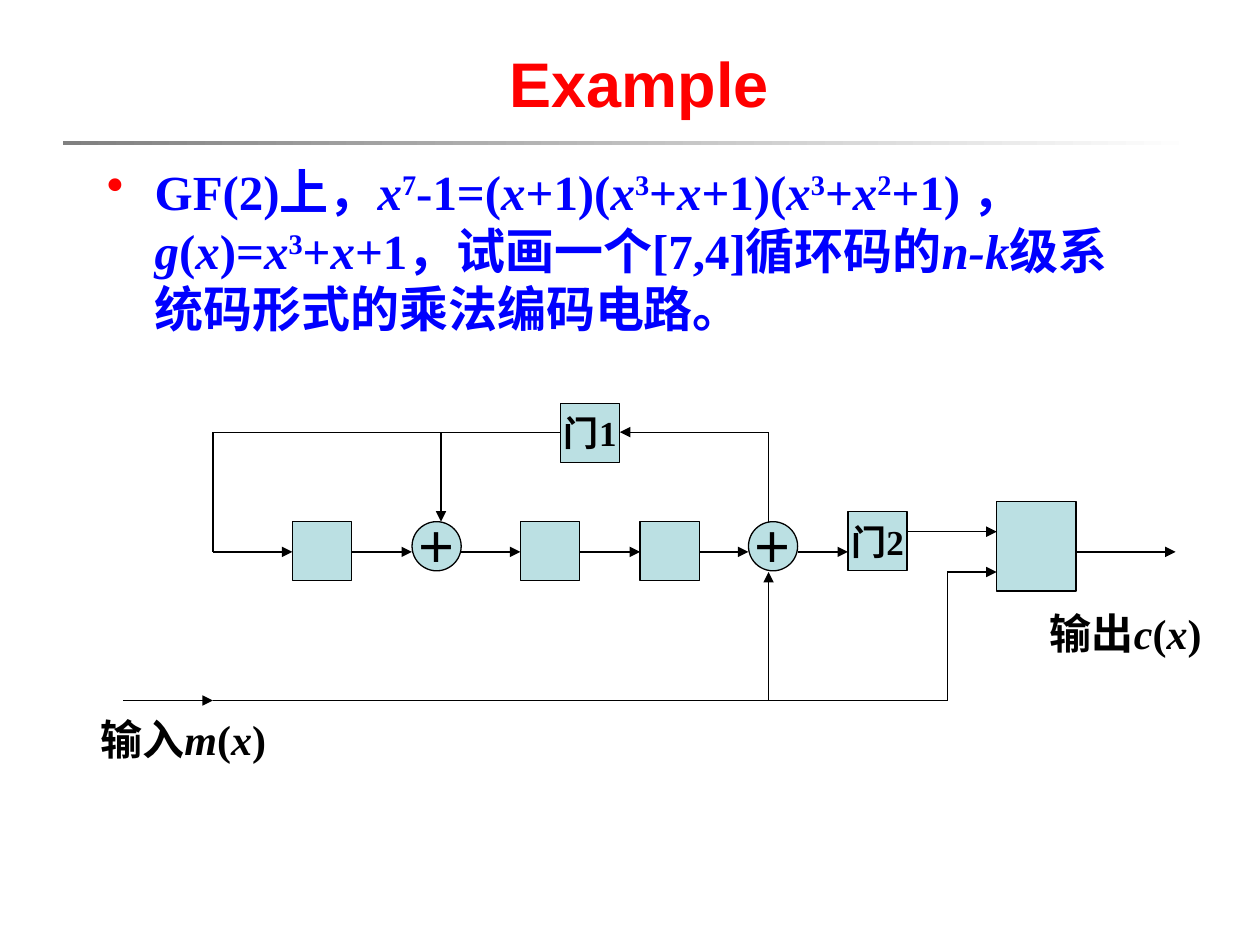
from dataclasses import dataclass
from itertools import pairwise

from lxml import etree
from pptx import Presentation, util as u
from pptx.dml.color import RGBColor
from pptx.enum import shapes, text
from pptx.oxml.ns import qn


@dataclass(frozen=True)
class Theme:
    red: str = "FF0000"
    blue: str = "0000FF"
    black: str = "000000"
    block: str = "BBE0E3"
    rule_start: str = "808080"
    rule_end: str = "FFFFFF"
    sans: str = "Arial"
    serif: str = "Times New Roman"
    title: int = 36
    body: int = 28
    label: int = 24
    gate: int = 20
    line: float = 0.75


@dataclass(frozen=True)
class Block:
    left: float
    top: float
    width: float
    height: float
    caption: str = ""
    round: bool = False

    @property
    def right(self) -> float:
        return self.left + self.width


@dataclass(frozen=True)
class Wire:
    start: tuple[float, float]
    end: tuple[float, float]
    arrow: bool = True


@dataclass(frozen=True)
class Style:
    size: int
    color: str
    latin: str


THEME = Theme()
SIDE, DISC = 0.47, 0.39
ROW, MIDDLE, FEEDBACK, INPUT = 4.14, 4.38, 3.43, 5.56
LOOP, TAP, SUM, BYPASS = 1.69, 3.5, 6.1, 7.52
UPPER, LOWER = 4.22, 4.54

GATE_ONE = Block(4.45, 3.2, SIDE, SIDE, "门1")
GATE_TWO = Block(6.73, 4.06, SIDE, SIDE, "门2")
SWITCH = Block(7.91, 3.98, 0.63, 0.71)
CHAIN = [
    Block(2.32, ROW, SIDE, SIDE),
    Block(3.27, ROW, DISC, DISC, "＋", True),
    Block(4.13, ROW, SIDE, SIDE),
    Block(5.08, ROW, SIDE, SIDE),
    Block(5.94, ROW, DISC, DISC, "＋", True),
    GATE_TWO,
]
WIRES = [
    *(Wire((a.right, MIDDLE), (b.left, MIDDLE)) for a, b in pairwise(CHAIN)),
    Wire((0.98, INPUT), (LOOP, INPUT)),
    Wire((LOOP, INPUT), (BYPASS, INPUT), False),
    Wire((SUM, INPUT), (SUM, LOWER)),
    Wire((BYPASS, INPUT), (BYPASS, LOWER), False),
    Wire((BYPASS, LOWER), (SWITCH.left, LOWER)),
    Wire((GATE_TWO.right, UPPER), (SWITCH.left, UPPER)),
    Wire((SWITCH.right, MIDDLE), (9.33, MIDDLE)),
    Wire((SUM, ROW), (SUM, FEEDBACK), False),
    Wire((SUM, FEEDBACK), (GATE_ONE.right, FEEDBACK)),
    Wire((GATE_ONE.left, FEEDBACK), (LOOP, FEEDBACK), False),
    Wire((TAP, FEEDBACK), (TAP, ROW)),
    Wire((LOOP, FEEDBACK), (LOOP, MIDDLE), False),
    Wire((LOOP, MIDDLE), (CHAIN[0].left, MIDDLE)),
]

TITLE = Style(THEME.title, THEME.red, THEME.sans)
BODY = Style(THEME.body, THEME.blue, THEME.serif)
LABEL = Style(THEME.label, THEME.black, THEME.serif)
PLUS = Style(THEME.label, THEME.black, THEME.sans)
GATE = Style(THEME.gate, THEME.black, THEME.serif)

# "_" starts an italic piece and "^" a raised one
PROBLEM = (
    "GF(2)上，|_x|^7|-1=(|_x|+1)(|_x|^3|+|_x|+1)(|_x|^3|+|_x|^2|+1) ，|"
    "_g|(|_x|)=|_x|^3|+|_x|+1，试画一个[7,4]循环码的|_n-k|级系统码形式的乘法编码电路。"
)


def add_spans(para, markup: str, style: Style) -> None:
    for piece in markup.split("|"):
        span = para.add_run()
        span.text = piece.lstrip("_^")
        values = {"size": u.Pt(style.size), "name": style.latin,
                  "bold": True, "italic": piece.startswith("_")}
        for name, value in values.items():
            setattr(span.font, name, value)
        span.font.color.rgb = RGBColor.from_string(style.color)
        if piece.startswith("^"):
            span._r.get_or_add_rPr().set("baseline", "30000")


def add_text(page, area: tuple[float, float, float, float], markup: str, style: Style,
             align=text.PP_ALIGN.CENTER, anchor=text.MSO_ANCHOR.TOP):
    box = page.shapes.add_textbox(*map(u.Inches, area))
    frame = box.text_frame
    frame.word_wrap, frame.vertical_anchor = True, anchor
    para = frame.paragraphs[0]
    para.alignment = align
    add_spans(para, markup, style)
    return para


def add_bullet(para, color: str) -> None:
    props = para._p.get_or_add_pPr()
    props.set("marL", str(u.Inches(0.38)))
    props.set("indent", str(-u.Inches(0.38)))
    tint = etree.SubElement(props, qn("a:buClr"))
    etree.SubElement(tint, qn("a:srgbClr"), val=color)
    etree.SubElement(props, qn("a:buChar"), char="•")


def add_block(page, block: Block) -> None:
    kind = shapes.MSO_SHAPE.OVAL if block.round else shapes.MSO_SHAPE.RECTANGLE
    area = (block.left, block.top, block.width, block.height)
    shape = page.shapes.add_shape(kind, *map(u.Inches, area))
    shape.shadow.inherit = False
    shape.fill.solid()
    shape.fill.fore_color.rgb = RGBColor.from_string(THEME.block)
    shape.line.color.rgb = RGBColor.from_string(THEME.black)
    shape.line.width = u.Pt(THEME.line)
    if block.caption:
        frame = shape.text_frame
        frame.word_wrap, frame.vertical_anchor = False, text.MSO_ANCHOR.MIDDLE
        para = frame.paragraphs[0]
        para.alignment = text.PP_ALIGN.CENTER
        add_spans(para, block.caption, PLUS if block.round else GATE)


def add_wire(page, wire: Wire) -> None:
    line = page.shapes.add_connector(
        shapes.MSO_CONNECTOR.STRAIGHT, *map(u.Inches, wire.start + wire.end))
    line.line.color.rgb = RGBColor.from_string(THEME.black)
    line.line.width = u.Pt(THEME.line)
    if wire.arrow:
        etree.SubElement(line.line._get_or_add_ln(), qn("a:tailEnd"), type="triangle")
    etree.SubElement(line._element.spPr, qn("a:effectLst"))


def add_rule(page) -> None:
    rule = page.shapes.add_shape(
        shapes.MSO_SHAPE.RECTANGLE, *map(u.Inches, (0.5, 1.12, 9, 0.03)))
    rule.shadow.inherit = False
    rule.line.fill.background()
    rule.fill.gradient()
    rule.fill.gradient_angle = 0
    for stop, color in zip(rule.fill.gradient_stops, (THEME.rule_start, THEME.rule_end)):
        stop.color.rgb = RGBColor.from_string(color)


def main() -> None:
    deck = Presentation()
    deck.slide_width, deck.slide_height = u.Inches(10), u.Inches(7.5)
    page = deck.slides.add_slide(deck.slide_layouts[6])
    add_rule(page)
    problem = add_text(page, (0.75, 1.23, 8.5, 5.59), PROBLEM, BODY, text.PP_ALIGN.LEFT)
    add_bullet(problem, THEME.red)
    add_text(page, (1.61, 0.28, 6.93, 0.75), "Example", TITLE,
             anchor=text.MSO_ANCHOR.MIDDLE)
    for block in (*CHAIN, GATE_ONE, SWITCH):
        add_block(page, block)
    for wire in WIRES:
        add_wire(page, wire)
    add_text(page, (0.67, 5.61, 1.57, 0.5), "输入|_m|(|_x|)", LABEL)
    add_text(page, (8.15, 4.77, 1.57, 0.5), "输出|_c|(|_x|)", LABEL)
    deck.save("out.pptx")


if __name__ == "__main__":
    main()
